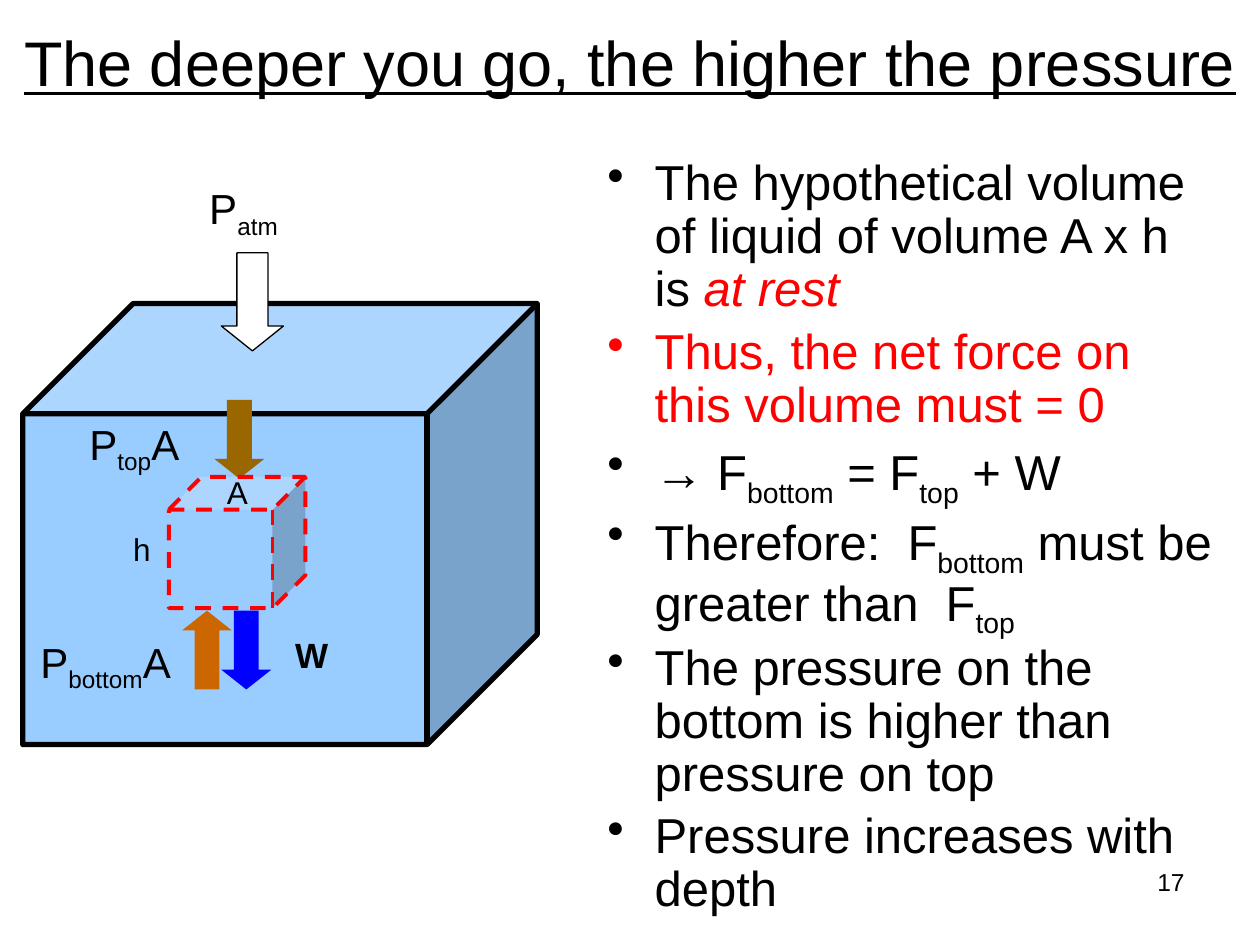
import pptx
import pptx.util
from pptx.dml.color import RGBColor
from pptx.enum.dml import MSO_LINE
from pptx.enum.shapes import MSO_SHAPE
from pptx.enum.text import MSO_ANCHOR, PP_ALIGN
from lxml import etree

Pt = pptx.util.Pt
THEME = {
    "font": "Arial",
    "title": 36, "body": 28, "label": 24, "weight": 20, "dimension": 18, "number": 14,
    "black": "000000", "white": "FFFFFF", "red": "FF0000", "blue": "0000FF",
    "water": "99CCFF", "brown": "996600", "orange": "CC6600",
}
SUB = {"sub": True}
RED = {"color": "red"}


def add_text(box, paragraphs, size, wrap=True, anchor=MSO_ANCHOR.TOP, **paragraph_format):
    """Each paragraph is a list of runs: plain text, or (text, format)."""
    sp = s.shapes.add_textbox(*map(Pt, box))
    tf = sp.text_frame
    tf.word_wrap = wrap
    tf.vertical_anchor = anchor
    for i, runs in enumerate(paragraphs):
        p = tf.paragraphs[0] if i == 0 else tf.add_paragraph()
        for name, value in paragraph_format.items():
            setattr(p, name, value)
        for run in runs:
            text, extra = (run, {}) if isinstance(run, str) else run
            look = dict(extra)
            r = p.add_run()
            r.text = text
            r.font.color.rgb = RGBColor.from_string(THEME[look.pop("color", "black")])
            if look.pop("sub", False):
                r.font._element.set("baseline", "-25000")
            look.update(name=THEME["font"], size=Pt(THEME[size]))
            for name, value in look.items():
                setattr(r.font, name, value)
    return tf


def add_solid(kind, box, adjustment, fill, line=None, width=0, dash=None, rotation=0):
    sp = s.shapes.add_shape(kind, *map(Pt, box))
    sp.shadow.inherit = False
    sp.rotation = rotation
    for i, value in enumerate(adjustment):
        sp.adjustments[i] = value
    sp.fill.solid()
    sp.fill.fore_color.rgb = RGBColor.from_string(THEME[fill])
    if line is None:
        sp.line.fill.background()
        return
    sp.line.color.rgb = RGBColor.from_string(THEME[line])
    sp.line.width = Pt(width)
    if dash:
        sp.line.dash_style = dash


prs = pptx.Presentation()
prs.slide_width, prs.slide_height = Pt(720), Pt(540)
s = prs.slides.add_slide(prs.slide_layouts[6])

add_text((0, 0, 720, 70.5), [[("The deeper you go, the higher the pressure", {"underline": True})]],
         "title", anchor=MSO_ANCHOR.MIDDLE, alignment=PP_ALIGN.CENTER)

# Tank, forces on the volume, and the volume itself
add_solid(MSO_SHAPE.CUBE, (13, 173.5, 294, 252), [0.25], "water", "black", 3)
for left, top, fill, rotation in [(126.5, 349, "blue", 0),
                                  (122.5, 228.5, "brown", 0),
                                  (104, 349, "orange", 180)]:
    add_solid(MSO_SHAPE.DOWN_ARROW, (left, top, 28.5, 45), [0.396, 0.5][::-1], fill,
              rotation=rotation)
add_solid(MSO_SHAPE.CUBE, (96.5, 272.5, 78, 75), [0.25], "water", "red", 2.25, MSO_LINE.DASH)
add_solid(MSO_SHAPE.DOWN_ARROW, (126.5, 144.5, 35.5, 56), [0.5, 0.4], "white", "black", 0.75)

for box, runs, size, wrap in [
    ((161.5, 358.5, 37.5, 31), [("W", {"bold": True})], "weight", True),
    ((44, 235.5, 68.5, 36), ["P", ("top", SUB), "A"], "label", False),
    ((16, 360, 97, 36), ["P", ("bottom", SUB), "A"], "label", True),
    ((122.5, 266.5, 26.5, 29), ["A"], "dimension", False),
    ((69, 299.5, 24.5, 29), ["h"], "dimension", False),
    ((112.5, 101, 58.5, 36), ["P", ("atm", SUB)], "label", True),
]:
    add_text(box, [runs], size, wrap)

# Argument
tf = add_text((340, 87, 361, 446.5), [
    ["The hypothetical volume of liquid of volume A x h is ",
     ("at rest", {"color": "red", "italic": True})],
    [("Thus, the net force on this volume must = 0", RED)],
    ["→ F", ("bottom", SUB), " = F", ("top", SUB), " + W"],
    ["Therefore:  F", ("bottom", SUB), " must be greater than  F", ("top", SUB)],
    ["The pressure on the bottom is higher than pressure on top"],
    ["Pressure increases with depth"],
], "body", line_spacing=0.9, space_before=Pt(5.6))
for p in tf.paragraphs:
    pPr = p._p.get_or_add_pPr()
    pPr.set("marL", str(Pt(27)))
    pPr.set("indent", str(-Pt(27)))
    bullet = etree.SubElement(pPr, pptx.oxml.ns.qn("a:buChar"))
    bullet.set("char", "•")

add_text((516, 492, 168, 37.5), [["17"]], "number", alignment=PP_ALIGN.RIGHT)

prs.save("out.pptx")
